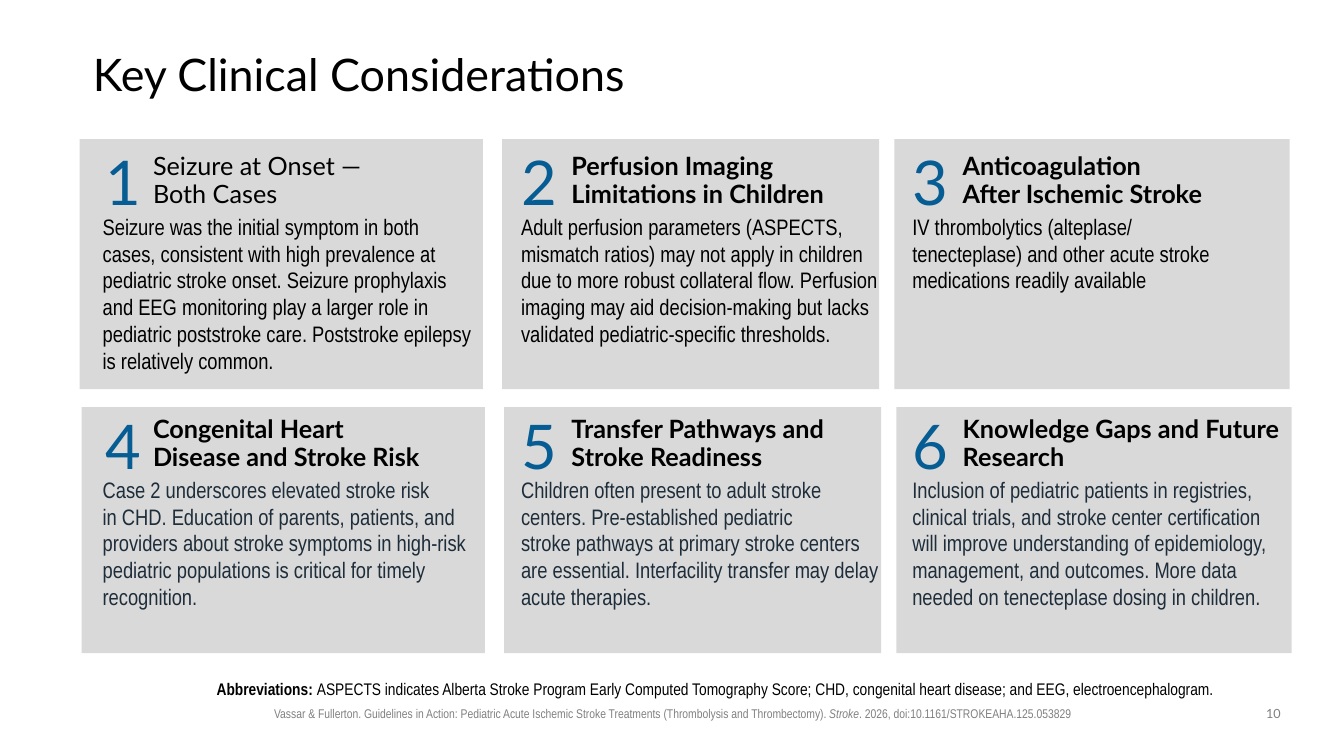
from dataclasses import dataclass
from typing import NamedTuple

from lxml.etree import SubElement
from pptx import Presentation
from pptx.dml.color import RGBColor as RGB
from pptx.enum.shapes import MSO_SHAPE as Shape
from pptx.enum.text import MSO_ANCHOR as Anchor, MSO_AUTO_SIZE as Fit, PP_ALIGN as Align
from pptx.oxml.ns import qn
from pptx.util import Inches, Pt


@dataclass(frozen=True)
class Theme:
    head: str = "Lato"
    body: str = "Arial Narrow"
    black: str = "000000"
    navy: str = "1E2D3A"
    blue: str = "065D93"
    grey: str = "808080"
    panel: str = "D9D9D9"
    title: int = 32
    digit: int = 44
    topic: int = 18
    text: int = 16
    note: int = 12
    small: int = 9


class Box(NamedTuple):
    left: float
    top: float
    wide: float
    tall: float


class Col(NamedTuple):
    panel: float
    wide: float
    digit: float
    text: float
    span: float


class Row(NamedTuple):
    panel: float
    tall: float
    digit: float
    text: float
    shift: float
    ink: str


class Card(NamedTuple):
    topic: str
    text: str
    tall: float
    bold: bool = True


T = Theme()

# Grid of three columns and two rows, in inches
COLS = [
    Col(0.79, 4.0, 0.95, 0.92, 3.9),
    Col(4.98, 3.74, 5.07, 5.07, 3.8),
    Col(8.87, 3.92, 8.95, 8.95, 3.88),
]
ROWS = [
    Row(1.38, 2.48, 1.38, 1.48, 0, T.black),
    Row(4.04, 2.44, 4.0, 4.09, 0.02, T.navy),
]
CARDS = [
    Card("Seizure at Onset —\nBoth Cases",
         "Seizure was the initial symptom in both cases, consistent with high "
         "prevalence at pediatric stroke onset. Seizure prophylaxis and EEG "
         "monitoring play a larger role in pediatric poststroke care. "
         "Poststroke epilepsy is relatively common.", 2.3, False),
    Card("Perfusion Imaging Limitations in Children",
         "Adult perfusion parameters (ASPECTS, mismatch ratios) may not apply in "
         "children due to more robust collateral flow. Perfusion imaging may aid "
         "decision-making but lacks validated pediatric-specific thresholds.", 2.35),
    Card("Anticoagulation\nAfter Ischemic Stroke",
         "IV thrombolytics (alteplase/\ntenecteplase) and other acute stroke "
         "medications readily available", 1.5),
    Card("Congenital Heart\nDisease and Stroke Risk",
         "Case 2 underscores elevated stroke risk\nin CHD. Education of parents, "
         "patients, and providers about stroke symptoms in high-risk pediatric "
         "populations is critical for timely recognition.", 2.03),
    Card("Transfer Pathways and Stroke Readiness",
         "Children often present to adult stroke centers. Pre-established "
         "pediatric\nstroke pathways at primary stroke centers are essential. "
         "Interfacility transfer may delay acute therapies.", 2.03),
    Card("Knowledge Gaps and Future Research",
         "Inclusion of pediatric patients in registries, clinical trials, and "
         "stroke center certification will improve understanding of epidemiology, "
         "management, and outcomes. More data needed on tenecteplase dosing in "
         "children.", 2.3),
]


def style(para, face: str, size: int, ink: str, bold: bool = False) -> None:
    for run in para.runs:
        font = run.font
        font.name, font.size, font.bold = face, Pt(size), bold
        font.color.rgb = RGB.from_string(ink)
    for br in para._p.findall(qn("a:br")):
        SubElement(br, qn("a:rPr"), sz=str(size * 100))


def add_text(slide, box: Box, align: Align = Align.LEFT, fit: Fit = Fit.NONE):
    frame = slide.shapes.add_textbox(*map(Inches, box)).text_frame
    frame.word_wrap, frame.auto_size = True, fit
    frame.paragraphs[0].alignment = align
    return frame


def add_runs(para, *parts: str) -> None:
    for part in parts:
        para.add_run().text = part


def add_panel(slide, box: Box) -> None:
    panel = slide.shapes.add_shape(Shape.RECTANGLE, *map(Inches, box))
    panel.shadow.inherit = False
    panel.fill.solid()
    panel.fill.fore_color.rgb = RGB.from_string(T.panel)
    panel.line.fill.background()


def add_card(slide, num: int, card: Card, col: Col, row: Row) -> None:
    add_panel(slide, Box(col.panel + row.shift, row.panel, col.wide, row.tall))

    # Number
    digit = add_text(slide, Box(col.digit, row.digit, 0.58, 0.8), fit=Fit.SHAPE_TO_FIT_TEXT)
    digit.paragraphs[0].text = str(num)
    style(digit.paragraphs[0], T.head, T.digit, T.blue)

    # Topic, indented past the number, and its text
    frame = add_text(slide, Box(col.text, row.text, col.span, card.tall),
                     fit=Fit.SHAPE_TO_FIT_TEXT)
    topic, text = frame.paragraphs[0], frame.add_paragraph()
    topic.text, text.text = card.topic, card.text
    topic._p.get_or_add_pPr().set("marL", str(Inches(0.5)))
    topic.line_spacing, topic.space_after = 0.9, Pt(3)
    style(topic, T.head, T.topic, T.black, card.bold)
    style(text, T.body, T.text, row.ink)


def add_title(slide, box: Box, text: str) -> None:
    title = slide.shapes.title
    title.left, title.top, title.width, title.height = map(Inches, box)
    frame = title.text_frame
    frame.margin_left = frame.margin_right = frame.margin_top = frame.margin_bottom = 0
    frame.vertical_anchor, frame.auto_size = Anchor.MIDDLE, Fit.NONE
    para = frame.paragraphs[0]
    para.text, para.alignment, para.line_spacing = text, Align.LEFT, 0.9
    style(para, T.head, T.title, T.black)


def add_foot(slide) -> None:
    # Abbreviations
    frame = add_text(slide, Box(1.67, 6.46, 10.95, 0.52), Align.CENTER)
    frame.margin_left, frame.vertical_anchor = 0, Anchor.BOTTOM
    note = frame.paragraphs[0]
    note.line_spacing = 0.9
    add_runs(note, "Abbreviations: ",
             "ASPECTS indicates Alberta Stroke Program Early Computed Tomography "
             "Score; CHD, congenital heart disease; and EEG, electroencephalogram.")
    style(note, T.body, T.note, T.black)
    note.runs[0].font.bold = True

    # Citation
    cite = add_text(slide, Box(2.36, 6.95, 8.62, 0.25), Align.CENTER).paragraphs[0]
    add_runs(cite, "Vassar & Fullerton. Guidelines in Action: Pediatric Acute Ischemic "
             "Stroke Treatments (Thrombolysis and Thrombectomy). ",
             "Stroke", ". 2026, doi:10.1161/STROKEAHA.125.053829")
    style(cite, T.body, T.small, T.grey)
    cite.runs[1].font.italic = True

    # Page number
    page = add_text(slide, Box(12.42, 6.95, 0.42, 0.26), Align.CENTER).paragraphs[0]
    page.text = "10"
    style(page, T.head, T.small, T.grey)


def main() -> None:
    deck = Presentation()
    deck.slide_width, deck.slide_height = Inches(13.33), Inches(7.5)
    slide = deck.slides.add_slide(deck.slide_layouts[5])
    add_title(slide, Box(0.92, 0.4, 11.5, 0.72), "Key Clinical Considerations")
    for i, card in enumerate(CARDS):
        row, col = divmod(i, len(COLS))
        add_card(slide, i + 1, card, COLS[col], ROWS[row])
    add_foot(slide)
    deck.save("out.pptx")


if __name__ == "__main__":
    main()
